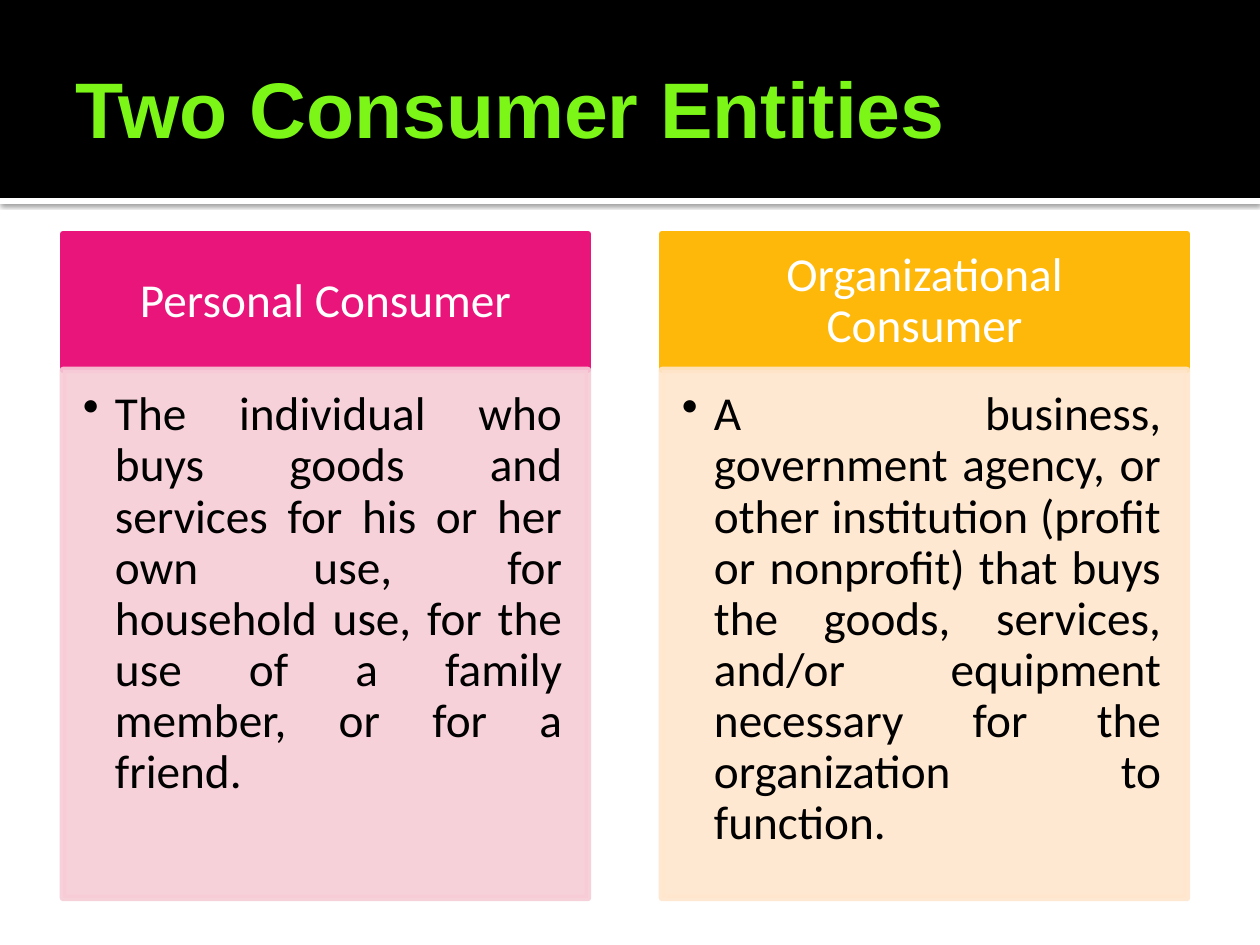
from lxml.etree import SubElement
from pptx import Presentation
from pptx.dml.color import RGBColor
from pptx.enum.shapes import MSO_SHAPE
from pptx.enum.text import MSO_ANCHOR, PP_ALIGN
from pptx.oxml.ns import qn
from pptx.util import Emu, Pt

BLACK = RGBColor(0x00, 0x00, 0x00)
WHITE = RGBColor(0xFF, 0xFF, 0xFF)
GREEN = RGBColor(0x7B, 0xF6, 0x16)
PINK = RGBColor(0xEA, 0x15, 0x7A)
PALE_PINK = RGBColor(0xF7, 0xCC, 0xD7)
AMBER = RGBColor(0xFE, 0xB8, 0x0A)
PALE_AMBER = RGBColor(0xFF, 0xE6, 0xCC)

TITLE = "Two Consumer Entities"
ENTITIES = [
    ("Personal Consumer",
     "The individual who buys goods and services for his or her own use, "
     "for household use, for the use of a family member, or for a friend.",
     PINK, PALE_PINK),
    ("Organizational Consumer",
     "A business, government agency, or other institution (profit or nonprofit) "
     "that buys the goods, services, and/or equipment necessary for the "
     "organization to function.",
     AMBER, PALE_AMBER),
]

SLIDE_W, SLIDE_H = 1260, 945
BANNER_H, RULE_H = 198, 6
MARGIN, COLUMN_W, COLUMN_STEP = 63, 525, 599
HEADER_TOP, HEADER_H, BODY_H = 234, 136, 528
BULLET_INDENT = 32


def px(count):
    return Emu(round(count * 914400 / 126))


def add_rect(slide, left, top, width, height, color):
    rect = slide.shapes.add_shape(
        MSO_SHAPE.RECTANGLE, px(left), px(top), px(width), px(height))
    rect.fill.solid()
    rect.fill.fore_color.rgb = color
    rect.line.fill.background()
    rect.shadow.inherit = False
    return rect


def outline(rect, color):
    rect.line.color.rgb = color
    rect.line.width = Pt(3.78)


def set_alpha(parent, percent):
    for color in parent.iter(qn("a:srgbClr")):
        SubElement(color, qn("a:alpha"), val=str(percent * 1000))


def write(shape, text, insets, anchor, align, font_name, size, color):
    frame = shape.text_frame
    frame.word_wrap = True
    frame.vertical_anchor = anchor
    (frame.margin_left, frame.margin_top,
     frame.margin_right, frame.margin_bottom) = map(px, insets)
    paragraph = frame.paragraphs[0]
    paragraph.text = text
    paragraph.alignment = align
    paragraph.font.name = font_name
    paragraph.font.size = Pt(size)
    paragraph.font.color.rgb = color
    return paragraph


def add_bullet(paragraph):
    properties = paragraph._p.get_or_add_pPr()
    properties.set("marL", str(px(BULLET_INDENT)))
    properties.set("indent", str(-px(BULLET_INDENT)))
    SubElement(properties, qn("a:buChar"), char="•")
    default_run = properties.find(qn("a:defRPr"))
    if default_run is not None:
        properties.append(default_run)


def add_banner(slide):
    rule = add_rect(slide, 0, BANNER_H, SLIDE_W, RULE_H, WHITE)
    effects = rule._element.spPr.find(qn("a:effectLst"))
    shadow = SubElement(effects, qn("a:outerShdw"), blurRad=str(Pt(2.5)),
                        dist=str(Pt(0.8)), dir="5400000", rotWithShape="0")
    SubElement(shadow, qn("a:srgbClr"), val=str(BLACK))
    set_alpha(shadow, 60)
    add_rect(slide, 0, 0, SLIDE_W, BANNER_H, BLACK)
    title = slide.shapes.add_textbox(
        px(MARGIN), px(21), px(SLIDE_W - 2 * MARGIN), px(173))
    paragraph = write(title, TITLE, (13, 6, 6, 6), MSO_ANCHOR.MIDDLE,
                      PP_ALIGN.LEFT, "Arial", 45, GREEN)
    paragraph.font.bold = True


def add_entity(slide, left, name, description, color, pale_color):
    header = add_rect(slide, left, HEADER_TOP, COLUMN_W, HEADER_H, color)
    outline(header, color)
    heading = write(header, name, (26, 15, 26, 15), MSO_ANCHOR.MIDDLE,
                    PP_ALIGN.CENTER, "Calibri", 27, WHITE)
    heading.line_spacing = 0.9

    body = add_rect(slide, left, HEADER_TOP + HEADER_H, COLUMN_W, BODY_H, pale_color)
    outline(body, pale_color)
    set_alpha(body._element.spPr, 90)
    definition = write(body, description, (20, 20, 26, 30), MSO_ANCHOR.TOP,
                       PP_ALIGN.JUSTIFY, "Calibri", 27, BLACK)
    definition.line_spacing = 0.9
    add_bullet(definition)


def main():
    presentation = Presentation()
    presentation.slide_width = px(SLIDE_W)
    presentation.slide_height = px(SLIDE_H)
    slide = presentation.slides.add_slide(presentation.slide_layouts[6])
    add_banner(slide)
    for column, entity in enumerate(ENTITIES):
        add_entity(slide, MARGIN + column * COLUMN_STEP, *entity)
    presentation.save("out.pptx")


if __name__ == "__main__":
    main()
